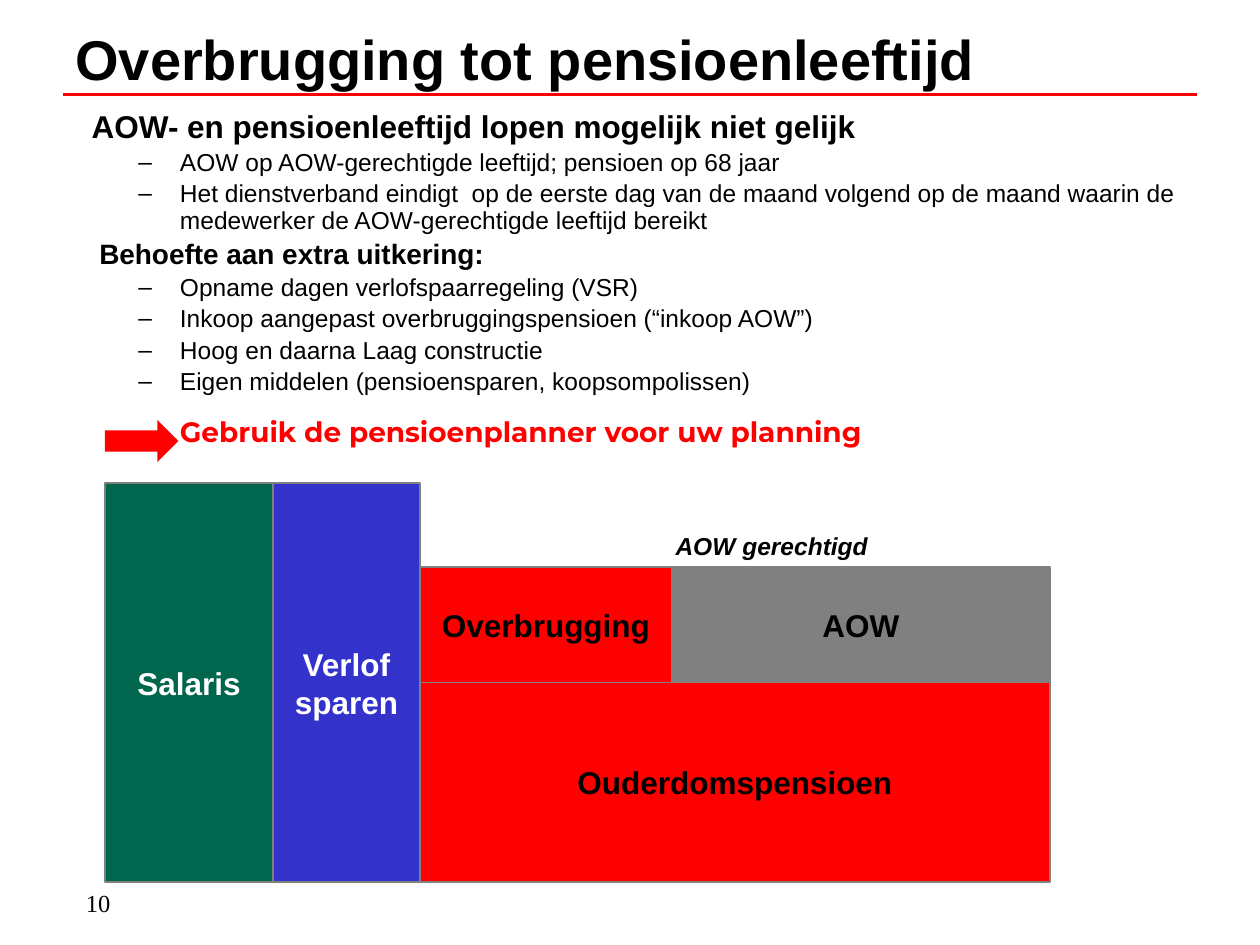
import pptx
import pptx.util
import pptx.dml.color
import pptx.enum.shapes
import pptx.enum.text
import pptx.oxml
import pptx.oxml.ns

Inches, Pt = pptx.util.Inches, pptx.util.Pt
ALIGN, ANCHOR = pptx.enum.text.PP_ALIGN, pptx.enum.text.MSO_ANCHOR
SHAPE = pptx.enum.shapes.MSO_SHAPE

# Content
COLORS = {"black": "000000", "white": "FFFFFF", "red": "FF0000",
          "green": "00664D", "blue": "3333CC", "gray": "808080"}
TITLE = "Overbrugging tot pensioenleeftijd"
PAGE_NUMBER = "10"
LABEL = "AOW gerechtigd"
# Text styles: size, bold, color, font, indent in inches, space before in points
STYLES = {
    "heading": (18, True, "black", "Arial", 0.13, 0),
    "subheading": (16, True, "black", "Arial", 0.19, 3.2),
    "bullet": (14, False, "black", "Arial", 0.83, 2.8),
    "advice": (16, True, "red", "Montserrat", 0.83, 13),
}
BODY = [
    ("heading", "AOW- en pensioenleeftijd lopen mogelijk niet gelijk"),
    ("bullet", "AOW op AOW-gerechtigde leeftijd; pensioen op 68 jaar"),
    ("bullet", "Het dienstverband eindigt  op de eerste dag van de maand volgend "
               "op de maand waarin de medewerker de AOW-gerechtigde leeftijd bereikt"),
    ("subheading", "Behoefte aan extra uitkering:"),
    ("bullet", "Opname dagen verlofspaarregeling (VSR)"),
    ("bullet", "Inkoop aangepast overbruggingspensioen (“inkoop AOW”)"),
    ("bullet", "Hoog en daarna Laag constructie"),
    ("bullet", "Eigen middelen (pensioensparen, koopsompolissen)"),
    ("advice", "Gebruik de pensioenplanner voor uw planning"),
]
# Income blocks: lines, fill, text color, (column, row, columns, rows)
BLOCKS = [
    (["Salaris"], "green", "white", (5, 23, 8, 19)),
    (["Overbrugging"], "red", "black", (20, 27, 12, 5.5)),
    (["AOW"], "gray", "black", (32, 27, 18, 5.5)),
    (["Ouderdomspensioen"], "red", "black", (20, 32.5, 30, 9.5)),
    (["Verlof", "sparen"], "blue", "white", (13, 23, 7, 19)),
]

# Slide and grid of 60 columns by 45 rows
presentation = pptx.Presentation()
presentation.slide_width, presentation.slide_height = Inches(10), Inches(7.5)
slide = presentation.slides.add_slide(presentation.slide_layouts[6])
COLUMN = presentation.slide_width / 60
ROW = presentation.slide_height / 45


def place(column, row, columns, rows):
    return (round(column * COLUMN), round(row * ROW),
            round(columns * COLUMN), round(rows * ROW))


def color(name):
    return pptx.dml.color.RGBColor.from_string(COLORS[name])


def add_run(paragraph, text, size, bold=True, ink="black", font="Arial", italic=False):
    run = paragraph.add_run()
    run.text = text
    run.font.size, run.font.name = Pt(size), font
    run.font.bold, run.font.italic = bold, italic
    run.font.color.rgb = color(ink)


def add_text_box(cell, anchor=ANCHOR.TOP):
    frame = slide.shapes.add_textbox(*place(*cell)).text_frame
    frame.word_wrap = True
    frame.vertical_anchor = anchor
    return frame


def add_filled_shape(kind, cell, fill):
    shape = slide.shapes.add_shape(kind, *place(*cell))
    shape.shadow.inherit = False
    shape.fill.solid()
    shape.fill.fore_color.rgb = color(fill)
    return shape


def add_dash_bullet(paragraph):
    properties = paragraph._p.get_or_add_pPr()
    font = pptx.oxml.ns.qn("a:buFont")
    properties.append(properties.makeelement(font, {"typeface": "Arial"}))
    character = pptx.oxml.ns.qn("a:buChar")
    properties.append(properties.makeelement(character, {"char": "–"}))


# Rule under the title
left, top, width, _ = place(3, 4.5, 54, 0)
rule = slide.shapes.add_connector(
    pptx.enum.shapes.MSO_CONNECTOR.STRAIGHT, left, top, left + width, top)
rule.line.color.rgb, rule.line.width = color("red"), Pt(2)
rule._element.spPr.append(pptx.oxml.parse_xml(
    "<a:effectLst %s/>" % pptx.oxml.ns.nsdecls("a")))

# Page number and title
add_run(add_text_box((3.5, 42, 12.5, 2)).paragraphs[0], PAGE_NUMBER, 14,
        bold=False, font="Times New Roman")
add_run(add_text_box((3, 0, 54.5, 5.5), ANCHOR.MIDDLE).paragraphs[0], TITLE, 32)

# Body text
body = add_text_box((3, 5, 54.5, 17.5))
for index, (style, text) in enumerate(BODY):
    size, bold, ink, font, indent, space = STYLES[style]
    paragraph = body.paragraphs[0] if index == 0 else body.add_paragraph()
    paragraph.line_spacing = 0.9
    paragraph.space_before = Pt(space)
    properties = paragraph._p.get_or_add_pPr()
    properties.set("marL", str(Inches(indent)))
    if style == "bullet":
        properties.set("indent", str(-Inches(0.33)))
        add_dash_bullet(paragraph)
    add_run(paragraph, text, size, bold, ink, font)

# Income blocks
for lines, fill, ink, cell in BLOCKS:
    block = add_filled_shape(SHAPE.RECTANGLE, cell, fill)
    block.line.color.rgb, block.line.width = color("gray"), Pt(0.75)
    frame = block.text_frame
    frame.word_wrap = False
    frame.vertical_anchor = ANCHOR.MIDDLE
    for index, line in enumerate(lines):
        paragraph = frame.paragraphs[0] if index == 0 else frame.add_paragraph()
        paragraph.alignment = ALIGN.CENTER
        add_run(paragraph, line, 18, ink=ink)

# Label above the AOW block
label = add_text_box((31.5, 25, 10.5, 2)).paragraphs[0]
label.alignment = ALIGN.CENTER
add_run(label, LABEL, 14, italic=True)

# Arrow pointing at the advice
arrow = add_filled_shape(SHAPE.RIGHT_ARROW, (5, 20, 3.5, 2), "red")
arrow.line.fill.background()

presentation.save("out.pptx")
